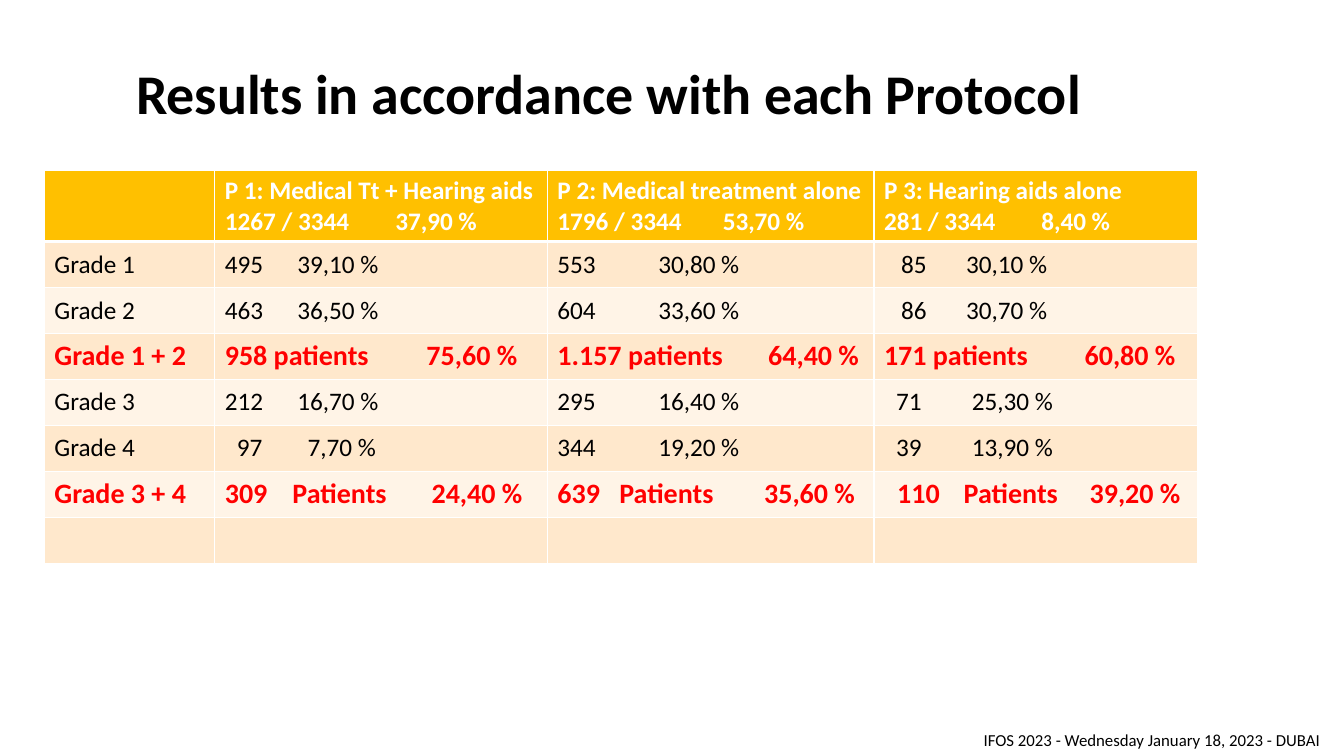
from typing import NamedTuple

from lxml.etree import SubElement
from pptx import Presentation
from pptx.dml.color import RGBColor
from pptx.enum.text import MSO_ANCHOR as Anchor
from pptx.oxml import parse_xml
from pptx.oxml.ns import nsdecls, qn
from pptx.util import Inches, Pt

SLIDE_WIDTH, SLIDE_HEIGHT = Inches(13.333), Inches(7.5)
BLACK, WHITE, RED = "000000", "FFFFFF", "FF0000"
AMBER, BANDS = "FFC000", ("FFE8CC", "FFF4E7")


class Piece(NamedTuple):
    """Words that start at a share (in %) of the slide width from the cell text edge."""
    words: str
    start: float = 0


class GradeRow(NamedTuple):
    grade: str
    protocols: tuple[tuple[Piece, ...], ...]
    total: bool = False


def across(percent: float) -> int:
    return round(SLIDE_WIDTH * percent / 100)


def down(percent: float) -> int:
    return round(SLIDE_HEIGHT * percent / 100)


def colour(hex_code: str) -> RGBColor:
    return RGBColor.from_string(hex_code)


def counts(patients: str, share: str, share_at: float, patients_at: float = 0):
    return Piece(patients, patients_at), Piece(share, share_at)


def write(frame, lines, *, size=18, ink=BLACK, bold=False, spacing=None) -> None:
    """Fill a text frame with lines, each a tuple of pieces set on tab stops."""
    for number, pieces in enumerate(lines):
        paragraph = frame.add_paragraph() if number else frame.paragraphs[0]
        if spacing:
            paragraph.line_spacing = spacing
        stops = [piece.start for piece in pieces if piece.start]
        if stops:
            tab_list = SubElement(paragraph._p.get_or_add_pPr(), qn("a:tabLst"))
            for stop in stops:
                SubElement(tab_list, qn("a:tab"), pos=str(across(stop)), algn="l")
        run = paragraph.add_run()
        run.text = "".join(("\t" if piece.start else "") + piece.words for piece in pieces)
        run.font.name, run.font.size, run.font.bold = "Calibri", Pt(size), bold
        run.font.color.rgb = colour(ink)


def add_words(slide, left, top, width, height, words, anchor=Anchor.TOP, **look) -> None:
    box = slide.shapes.add_textbox(across(left), down(top), across(width), down(height))
    box.text_frame.word_wrap = True
    box.text_frame.vertical_anchor = anchor
    write(box.text_frame, [(Piece(words),)], **look)


def dress(cell, fill: str, top: float = 1, bottom: float = 1) -> None:
    """Set the fill, the anchor and the white borders of a cell."""
    cell.vertical_anchor = Anchor.MIDDLE
    cell.fill.solid()
    cell.fill.fore_color.rgb = colour(fill)
    borders = {"lnL": 1, "lnR": 1, "lnT": top, "lnB": bottom}
    for place, (side, points) in enumerate(borders.items()):
        cell._tc.get_or_add_tcPr().insert(place, parse_xml(
            f'<a:{side} {nsdecls("a")} w="{Pt(points)}"><a:solidFill>'
            f'<a:srgbClr val="{WHITE}"/></a:solidFill></a:{side}>'))


COLUMN_WIDTHS = (12.68, 24.75, 24.3, 24.08)
HEADER_HEIGHT, GRADE_HEIGHT = 9.33, 6.08

PROTOCOLS = (
    ("P 1: Medical Tt + Hearing aids", counts("1267 / 3344", "37,90 %", 12.68)),
    ("P 2: Medical treatment alone", counts("1796 / 3344", "53,70 %", 12.3)),
    ("P 3: Hearing aids alone", counts("281 / 3344", "8,40 %", 11.7)),
)

GRADES = (
    GradeRow("Grade 1", (counts("495", "39,10 %", 5.4), counts("553", "30,80 %", 7.5),
                         counts("85", "30,10 %", 6.1, 1.28))),
    GradeRow("Grade 2", (counts("463", "36,50 %", 5.4), counts("604", "33,60 %", 7.5),
                         counts("86", "30,70 %", 6.1, 1.28))),
    GradeRow("Grade 1 + 2", (counts("958 patients", "75,60 %", 15),
                             counts("1.157 patients", "64,40 %", 15.68),
                             counts("171 patients", "60,80 %", 14.93)), total=True),
    GradeRow("Grade 3", (counts("212", "16,70 %", 5.4), counts("295", "16,40 %", 7.5),
                         counts("71", "25,30 %", 6.53, 0.9))),
    GradeRow("Grade 4", (counts("97", "7,70 %", 6.15, 0.9), counts("344", "19,20 %", 7.5),
                         counts("39", "13,90 %", 6.53, 0.9))),
    GradeRow("Grade 3 + 4", (
        (Piece("309"), Piece("Patients", 5.03), Piece("24,40 %", 15.38)),
        (Piece("639"), Piece("Patients", 4.6), Piece("35,60 %", 15.38)),
        (Piece("110", 0.98), Piece("Patients", 5.93), Piece("39,20 %", 15.3))), total=True),
    GradeRow("", ((), (), ())),
)


def add_results(slide) -> None:
    height = HEADER_HEIGHT + GRADE_HEIGHT * len(GRADES)
    results = slide.shapes.add_table(
        len(GRADES) + 1, len(COLUMN_WIDTHS), across(3.3), down(22.6),
        across(sum(COLUMN_WIDTHS)), down(height)).table
    for column, width in zip(results.columns, COLUMN_WIDTHS):
        column.width = across(width)
    for number, row in enumerate(results.rows):
        row.height = down(GRADE_HEIGHT if number else HEADER_HEIGHT)

    # Protocol headings
    for column in range(len(COLUMN_WIDTHS)):
        dress(results.cell(0, column), AMBER, bottom=3)
    for column, (protocol, patients) in enumerate(PROTOCOLS, 1):
        write(results.cell(0, column).text_frame, [(Piece(protocol),), patients],
              ink=WHITE, bold=True)

    # Grades, with the subtotals in red
    for number, grade_row in enumerate(GRADES, 1):
        look = dict(size=20, ink=RED, bold=True) if grade_row.total else {}
        entries = ((Piece(grade_row.grade),), *grade_row.protocols)
        for column, pieces in enumerate(entries):
            cell = results.cell(number, column)
            dress(cell, BANDS[(number - 1) % 2], top=3 if number == 1 else 1)
            if grade_row.grade:
                write(cell.text_frame, [pieces], **look)


def main() -> None:
    deck = Presentation()
    deck.slide_width, deck.slide_height = SLIDE_WIDTH, SLIDE_HEIGHT
    slide = deck.slides.add_slide(deck.slide_layouts[6])

    # Title
    add_words(slide, 9.38, 7.2, 86.25, 11.07, "Results in accordance with each Protocol",
              Anchor.MIDDLE, size=40, bold=True, spacing=0.9)
    add_results(slide)
    # Congress line
    add_words(slide, 72.45, 95.87, 27.75, 4.8,
              "IFOS 2023 - Wednesday January 18, 2023 - DUBAI", size=12)
    deck.save("out.pptx")


if __name__ == "__main__":
    main()
